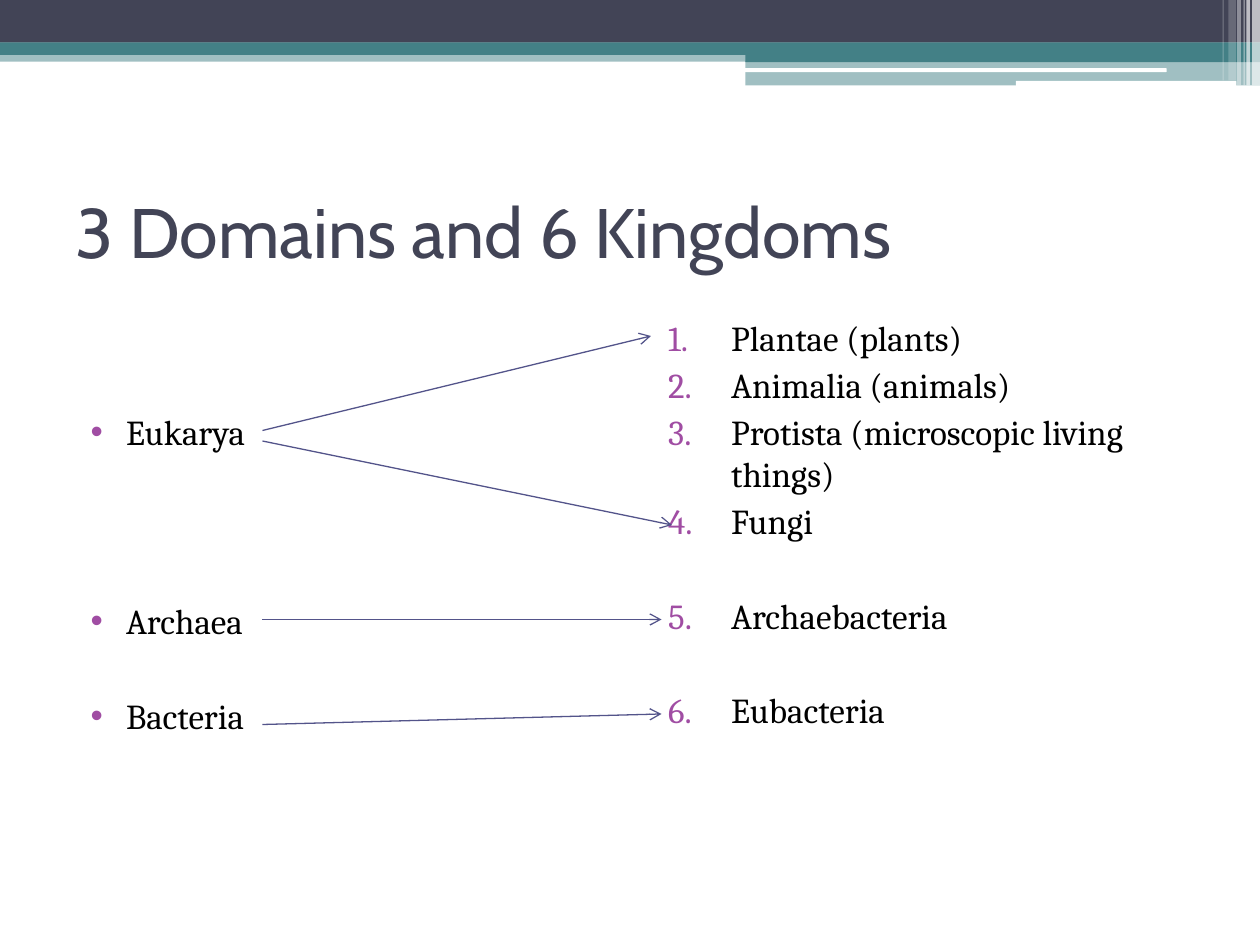
from pptx import Presentation
from pptx.dml.color import RGBColor
from pptx.enum.shapes import MSO_CONNECTOR, MSO_SHAPE
from pptx.enum.text import MSO_ANCHOR, MSO_AUTO_SIZE, PP_ALIGN
from pptx.oxml.ns import qn
from pptx.util import Pt
from lxml import etree

RECT, ROUND = MSO_SHAPE.RECTANGLE, MSO_SHAPE.ROUNDED_RECTANGLE
STRAIGHT = MSO_CONNECTOR.STRAIGHT
LEFT, MIDDLE, TOP = PP_ALIGN.LEFT, MSO_ANCHOR.MIDDLE, MSO_ANCHOR.TOP
NO_FIT = MSO_AUTO_SIZE.NONE

THEME = {
    "navy": "424456", "teal": "438086", "white": "FFFFFF", "text": "000000",
    "bullet": "A04DA3", "arrow": "53548A",
    "title_font": "Cabin", "body_font": "Cambria",
    "title_size": 40, "body_size": 20, "arrow_width": 0.75,
}

# Content: each list entry is (text, empty rows above it)
TITLE = "3 Domains and 6 Kingdoms"
DOMAINS = [("Eukarya", 2), ("Archaea", 3), ("Bacteria", 1)]
KINGDOMS = [
    ("Plantae (plants)", 0), ("Animalia (animals)", 0),
    ("Protista (microscopic living things)", 0), ("Fungi", 0),
    ("Archaebacteria", 1), ("Eubacteria", 1),
]

# Arrows from domain to kingdom: start y, end x, end y
ARROW_START_X = 150
ARROWS = [(246, 372, 192), (252, 384, 300), (354, 378, 354), (414, 378, 408)]

# Header bands: shape, left, top, width, height, colour, opacity in percent
BANDS = [
    (RECT, 0, 28.8, 720, 6.5, "teal", 50),
    (RECT, 0, 0, 720, 24.4, "navy", 100),
    (RECT, 0, 24.2, 720, 7.2, "teal", 100),
    (RECT, 426, 28.3, 294, 7.2, "teal", 100),
    (RECT, 426, 34.8, 294, 14, "teal", 50),
    (ROUND, 425.5, 39, 241.2, 2.2, "white", 100),
    (ROUND, 580.5, 46.2, 126, 3, "white", 100),
]
# White stripes at the right edge: left, width, height, opacity
STRIPES = [
    (715.5, 4.5, 48.8, 65), (712.2, 2.1, 48.8, 65), (710.6, 0.7, 48.8, 60),
    (707, 2.1, 48.8, 40), (702, 4.3, 46, 20), (698.6, 0.7, 46, 30),
]

# Layout
COLUMN_TOP, COLUMN_WIDTH, COLUMN_HEIGHT = 177, 318, 356.4
INSET, ROW_PITCH, ROW_SPACE = 3.6, 27, 3


def color(name):
    return RGBColor.from_string(THEME[name])


def add_band(slide, kind, left, top, width, height, fill, opacity):
    band = slide.shapes.add_shape(kind, Pt(left), Pt(top), Pt(width), Pt(height))
    band.shadow.inherit = False
    band.line.fill.background()
    band.fill.solid()
    band.fill.fore_color.rgb = color(fill)
    if opacity < 100:
        tint = band.fill._xPr.find(".//" + qn("a:srgbClr"))
        etree.SubElement(tint, qn("a:alpha"), val=str(opacity * 1000))


def place(holder, left, top, width, height, anchor):
    holder.left, holder.top = Pt(left), Pt(top)
    holder.width, holder.height = Pt(width), Pt(height)
    frame = holder.text_frame
    frame.word_wrap = True
    frame.auto_size = NO_FIT
    frame.vertical_anchor = anchor
    return frame


def add_run(paragraph, text, role, color_name):
    paragraph.alignment = LEFT
    run = paragraph.add_run()
    run.text = text
    run.font.name = THEME[role + "_font"]
    run.font.size = Pt(THEME[role + "_size"])
    run.font.color.rgb = color(color_name)


def fill_list(holder, left, items, margin, hanging, marker, marker_attrs):
    frame = place(holder, left, COLUMN_TOP, COLUMN_WIDTH, COLUMN_HEIGHT, TOP)
    # Space before a first paragraph is not drawn, so the inset holds its rows
    frame.margin_top = Pt(INSET + items[0][1] * ROW_PITCH)
    for index, (text, rows_above) in enumerate(items):
        paragraph = frame.add_paragraph() if index else frame.paragraphs[0]
        gap_rows = rows_above if index else 0
        paragraph.space_before = Pt(ROW_SPACE + gap_rows * ROW_PITCH)
        add_run(paragraph, text, "body", "text")
        props = paragraph._p.get_or_add_pPr()
        props.set("marL", str(Pt(margin)))
        props.set("indent", str(-Pt(hanging)))
        tint = etree.SubElement(props, qn("a:buClr"))
        etree.SubElement(tint, qn("a:srgbClr"), val=THEME["bullet"])
        etree.SubElement(props, qn(marker), **marker_attrs)


def add_arrow(slide, start_y, end_x, end_y):
    arrow = slide.shapes.add_connector(
        STRAIGHT, Pt(ARROW_START_X), Pt(start_y), Pt(end_x), Pt(end_y))
    arrow.line.color.rgb = color("arrow")
    arrow.line.width = Pt(THEME["arrow_width"])
    etree.SubElement(arrow.line._get_or_add_ln(), qn("a:tailEnd"), type="arrow")
    etree.SubElement(arrow._element.spPr, qn("a:effectLst"))


def main():
    deck = Presentation()
    deck.slide_width, deck.slide_height = Pt(720), Pt(540)
    slide = deck.slides.add_slide(deck.slide_layouts[3])
    title, domains, kingdoms = slide.placeholders

    # Header decoration
    for band in BANDS:
        add_band(slide, *band)
    for left, width, height, opacity in STRIPES:
        add_band(slide, RECT, left, 0, width, height, "white", opacity)

    # Title and the two lists
    heading = place(title, 36, 90, 648, 84, MIDDLE)
    add_run(heading.paragraphs[0], TITLE, "title", "navy")
    fill_list(domains, 36, DOMAINS, 28.8, 20.2, "a:buChar", {"char": "•"})
    fill_list(kingdoms, 366, KINGDOMS, 44.6, 36, "a:buAutoNum",
              {"type": "arabicPeriod"})

    # Arrows from domains to kingdoms
    for arrow in ARROWS:
        add_arrow(slide, *arrow)

    deck.save("out.pptx")


if __name__ == "__main__":
    main()
